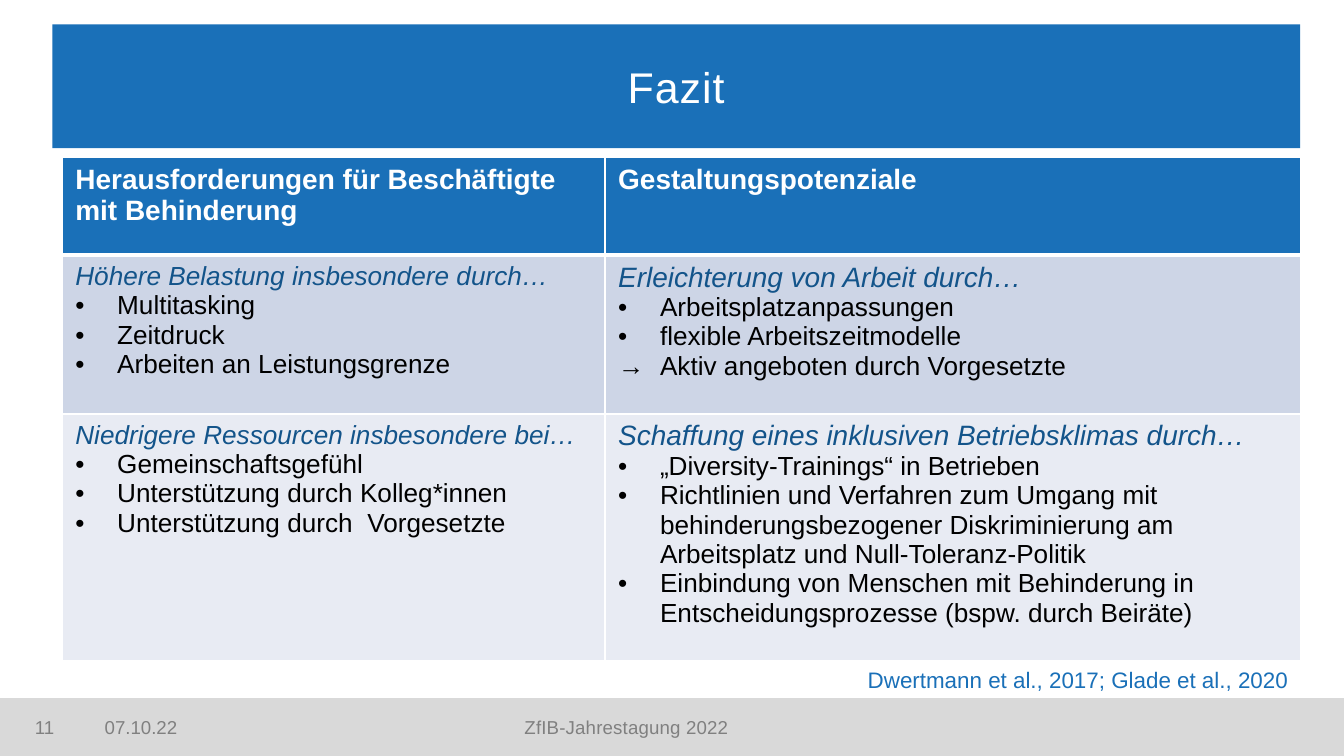
"""Build the closing slide with its table of challenges and design options."""
import dataclasses

import lxml.etree
import pptx
import pptx.dml.color
import pptx.enum.shapes
import pptx.enum.text
import pptx.oxml.ns
import pptx.util

Cm = pptx.util.Cm
Pt = pptx.util.Pt
qn = pptx.oxml.ns.qn
Align = pptx.enum.text.PP_ALIGN
Anchor = pptx.enum.text.MSO_ANCHOR
Shape = pptx.enum.shapes.MSO_SHAPE


@dataclasses.dataclass(frozen=True)
class Theme:
    """Hold the font, colours and type sizes."""
    font: str = "Arial"
    blue: str = "1A70B8"
    navy: str = "13548A"
    white: str = "FFFFFF"
    black: str = "000000"
    grey: str = "808080"
    bar: str = "D9D9D9"
    bands: tuple = ("CDD5E6", "E8EBF3")
    title: int = 23
    head: int = 15
    body: int = 14
    cite: int = 12
    foot: int = 10


THEME = Theme()
HEADS = ["Herausforderungen für Beschäftigte mit Behinderung", "Gestaltungspotenziale"]
ROWS = [
    [
        ("Höhere Belastung insbesondere durch…", THEME.body,
         ["•Multitasking", "•Zeitdruck", "•Arbeiten an Leistungsgrenze"]),
        ("Erleichterung von Arbeit durch…", THEME.head,
         ["•Arbeitsplatzanpassungen", "•flexible Arbeitszeitmodelle",
          "→Aktiv angeboten durch Vorgesetzte"]),
    ],
    [
        ("Niedrigere Ressourcen insbesondere bei…", THEME.body,
         ["•Gemeinschaftsgefühl", "•Unterstützung durch Kolleg*innen",
          "•Unterstützung durch  Vorgesetzte"]),
        ("Schaffung eines inklusiven Betriebsklimas durch…", THEME.head,
         ["•„Diversity-Trainings“ in Betrieben",
          "•Richtlinien und Verfahren zum Umgang mit behinderungsbezogener "
          "Diskriminierung am Arbeitsplatz und Null-Toleranz-Politik",
          "•Einbindung von Menschen mit Behinderung in "
          "Entscheidungsprozesse (bspw. durch Beiräte)"]),
    ],
]


def apply(target, values):
    """Set each named value on the target."""
    for name, value in values.items():
        setattr(target, name, value)


def tint(code):
    """Turn a hex code into a colour."""
    return pptx.dml.color.RGBColor.from_string(code)


def paint(fill, code):
    """Make a fill solid in one colour."""
    fill.solid()
    fill.fore_color.rgb = tint(code)


def write(par, text, size, color, space=0, **style):
    """Add one styled run to a paragraph."""
    run = par.add_run()
    run.text = text
    apply(run.font, {"name": THEME.font, "size": Pt(size), "bold": False, **style})
    run.font.color.rgb = tint(color)
    if space:
        run.font._element.set("spc", str(round(space * 100)))


def add_block(slide, box, code, kind=Shape.RECTANGLE):
    """Add a plain filled shape."""
    block = slide.shapes.add_shape(kind, *map(Cm, box))
    block.shadow.inherit = False
    paint(block.fill, code)
    paint(block.line.fill, code)
    block.line.width = Pt(0.75)
    return block


def add_title(slide, text):
    """Add the title band."""
    band = add_block(slide, (0.99, 0.46, 23.58, 2.34), THEME.blue, Shape.ROUNDED_RECTANGLE)
    band.adjustments[0] = 0
    band.line.fill.background()
    frame = band.text_frame
    apply(frame, {"vertical_anchor": Anchor.MIDDLE, "word_wrap": True})
    frame.paragraphs[0].alignment = Align.CENTER
    write(frame.paragraphs[0], text, THEME.title, THEME.white, 0.5)


def add_note(slide, box, text, size, color, align=Align.LEFT, space=0, **form):
    """Add a line of text in a box."""
    frame = slide.shapes.add_textbox(*map(Cm, box)).text_frame
    apply(frame, {"word_wrap": True, **form})
    frame.paragraphs[0].alignment = align
    write(frame.paragraphs[0], text, size, color, space)


def add_foot(slide):
    """Add the footer bar with number, date and event."""
    add_block(slide, (0, 13.2, 25.4, 1.09), THEME.bar)
    form = {"vertical_anchor": Anchor.MIDDLE, "margin_left": 0, "margin_right": 0}
    for left, width, text, align, space in (
        (1.98, 2.6, "07.10.22", Align.LEFT, 0),
        (5.31, 13.06, "ZfIB-Jahrestagung 2022", Align.CENTER, 0.1),
        (0.66, 1.12, "11", Align.LEFT, 0),
    ):
        add_note(slide, (left, 13.36, width, 0.76), text, THEME.foot, THEME.grey,
                 align, space, **form)


def add_point(frame, item):
    """Add a list line whose first letter is its bullet."""
    par = frame.add_paragraph()
    props = par._p.get_or_add_pPr()
    inset = Cm(0.79)
    props.set("marL", str(inset))
    props.set("indent", str(-inset))
    lxml.etree.SubElement(props, qn("a:buFont")).set("typeface", THEME.font)
    lxml.etree.SubElement(props, qn("a:buChar")).set("char", item[0])
    write(par, item[1:], THEME.body, THEME.black)


def edge(cell, top, base):
    """Draw white borders round a cell."""
    props = cell._tc.get_or_add_tcPr()
    for spot, (side, width) in enumerate((("L", 1), ("R", 1), ("T", top), ("B", base))):
        line = lxml.etree.Element(qn(f"a:ln{side}"), w=str(Pt(width)))
        fill = lxml.etree.SubElement(line, qn("a:solidFill"))
        lxml.etree.SubElement(fill, qn("a:srgbClr")).set("val", THEME.white)
        props.insert(spot, line)


def add_grid(slide):
    """Add the table with its header and list cells."""
    wide, high = (10.26, 13.16), (1.85, 3, 4.67)
    grid = slide.shapes.add_table(len(high), len(wide), Cm(1.17), Cm(2.97),
                                  Cm(sum(wide)), Cm(sum(high))).table
    for col, width in zip(grid.columns, wide):
        col.width = Cm(width)
    for row, height in zip(grid.rows, high):
        row.height = Cm(height)
    for col, head in enumerate(HEADS):
        cell = grid.cell(0, col)
        paint(cell.fill, THEME.blue)
        edge(cell, 1, 3)
        write(cell.text_frame.paragraphs[0], head, THEME.head, THEME.white, bold=True)
    for row, (cells, band) in enumerate(zip(ROWS, THEME.bands), 1):
        for col, (lead, size, items) in enumerate(cells):
            cell = grid.cell(row, col)
            paint(cell.fill, band)
            edge(cell, 3 if row == 1 else 1, 1)
            write(cell.text_frame.paragraphs[0], lead, size, THEME.navy, italic=True)
            for item in items:
                add_point(cell.text_frame, item)


def main():
    """Build and save the slide."""
    deck = pptx.Presentation()
    apply(deck, {"slide_width": Cm(25.4), "slide_height": Cm(14.29)})
    slide = deck.slides.add_slide(deck.slide_layouts[6])
    add_foot(slide)
    add_title(slide, "Fazit")
    add_grid(slide)
    add_note(slide, (16.15, 12.47, 8.97, 0.76),
             "Dwertmann et al., 2017; Glade et al., 2020", THEME.cite, THEME.blue)
    deck.save("out.pptx")


if __name__ == "__main__":
    main()
